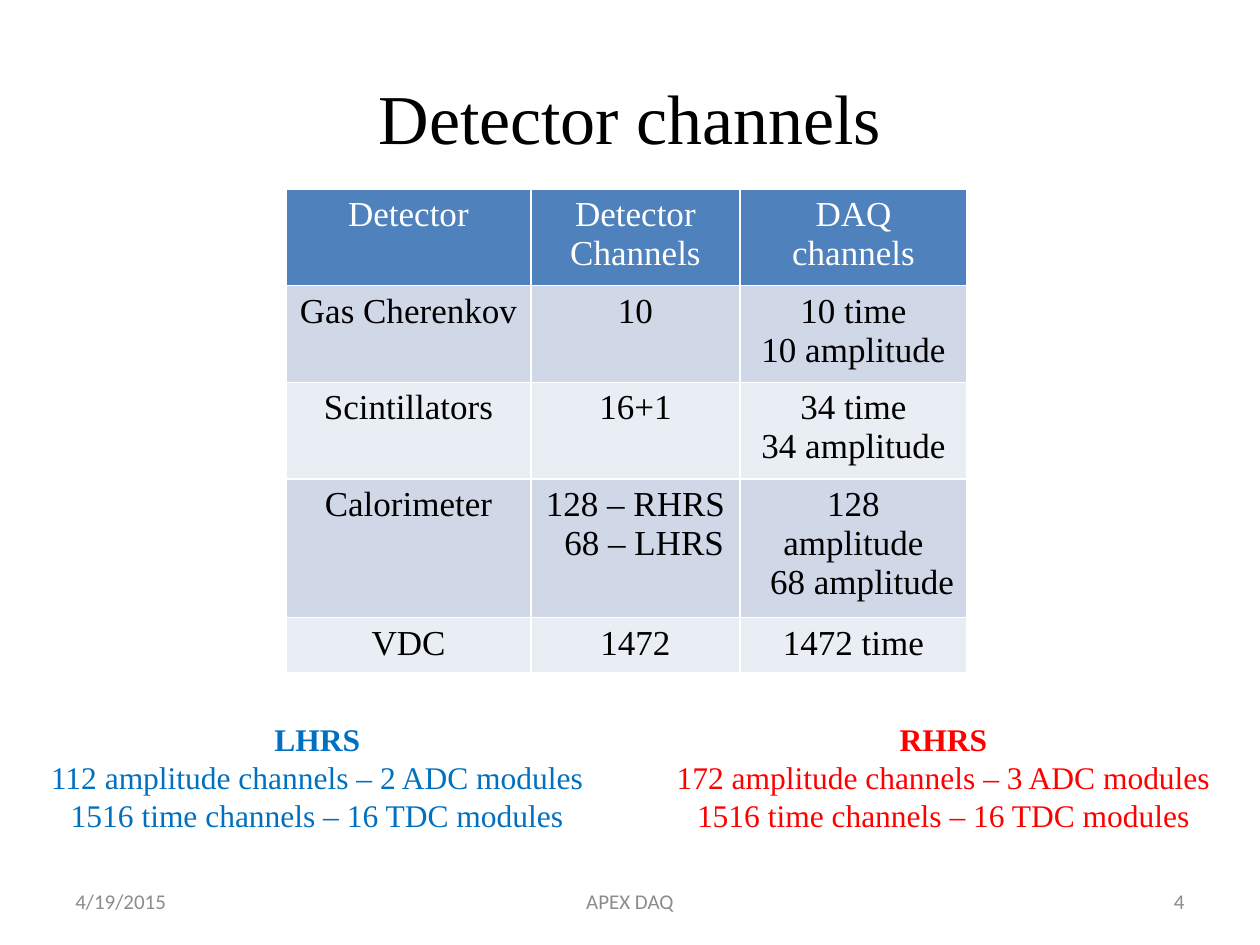
from pptx import Presentation
from pptx.dml.color import RGBColor
from pptx.enum.text import MSO_ANCHOR, PP_ALIGN
from pptx.util import Cm, Pt

LEFT, CENTER, RIGHT = PP_ALIGN.LEFT, PP_ALIGN.CENTER, PP_ALIGN.RIGHT
TOP, MIDDLE = MSO_ANCHOR.TOP, MSO_ANCHOR.MIDDLE
SERIF, SANS = "Times New Roman", "Calibri"
COLORS = {
    "black": "000000", "white": "FFFFFF", "gray": "8C8C8C",
    "blue": "0070C0", "red": "FF0000",
    "header": "4F81BD", "odd": "D0D8E8", "even": "E9EDF4",
}

TITLE = "Detector channels"
ROWS = [
    [["Detector"], ["Detector Channels"], ["DAQ channels"]],
    [["Gas Cherenkov"], ["10"], ["10 time", "10 amplitude"]],
    [["Scintillators"], ["16+1"], ["34 time", "34 amplitude"]],
    [["Calorimeter"], ["128 – RHRS", "68 – LHRS"], ["128 amplitude", "68 amplitude"]],
    [["VDC"], ["1472"], ["1472 time"]],
]
COLUMN_WIDTHS = [4.93, 4.22, 4.57]
ROW_HEIGHTS = [1.82] * 4 + [1.03]
INDENTED = ("68 – LHRS", "68 amplitude")
SUMMARIES = [
    (13.33, 11.38, "red", False,
     ["RHRS", "172 amplitude channels – 3 ADC modules", "1516 time channels – 16 TDC modules"]),
    (0.68, 11.43, "blue", True,
     ["LHRS", "112 amplitude channels – 2 ADC modules", "1516 time channels – 16 TDC modules"]),
]
FOOTERS = [
    (1.27, 5.93, LEFT, "4/19/2015"),
    (8.68, 8.04, CENTER, "APEX DAQ"),
    (18.2, 5.93, RIGHT, "4"),
]


def write_lines(frame, lines, size, color, font=SERIF, align=CENTER, bold_first=False):
    for index, line in enumerate(lines):
        paragraph = frame.paragraphs[0] if index == 0 else frame.add_paragraph()
        paragraph.alignment = align
        if line in INDENTED:
            paragraph._p.get_or_add_pPr().set("marL", str(Cm(0.35)))
        run = paragraph.add_run()
        run.text = line
        run.font.name = font
        run.font.size = Pt(size)
        run.font.bold = bold_first and index == 0
        run.font.color.rgb = RGBColor.from_string(COLORS[color])


def add_text(slide, left, top, width, height, anchor=TOP, wrap=True):
    frame = slide.shapes.add_textbox(Cm(left), Cm(top), Cm(width), Cm(height)).text_frame
    frame.word_wrap = wrap
    frame.vertical_anchor = anchor
    return frame


def add_channel_table(slide):
    table = slide.shapes.add_table(
        len(ROWS), len(COLUMN_WIDTHS), Cm(5.77), Cm(3.81),
        Cm(sum(COLUMN_WIDTHS)), Cm(sum(ROW_HEIGHTS))).table
    for column, width in zip(table.columns, COLUMN_WIDTHS):
        column.width = Cm(width)
    for index, (row, height, texts) in enumerate(zip(table.rows, ROW_HEIGHTS, ROWS)):
        row.height = Cm(height)
        fill = "header" if index == 0 else ("even", "odd")[index % 2]
        for cell, lines in zip(row.cells, texts):
            cell.fill.solid()
            cell.fill.fore_color.rgb = RGBColor.from_string(COLORS[fill])
            write_lines(cell.text_frame, lines, 20, "white" if index == 0 else "black")


def main():
    presentation = Presentation()
    presentation.slide_width, presentation.slide_height = Cm(25.4), Cm(19.05)
    slide = presentation.slides.add_slide(presentation.slide_layouts[5])

    title = slide.shapes.title
    title.left, title.top, title.width, title.height = Cm(1.27), Cm(0.76), Cm(22.86), Cm(3.18)
    title.text_frame.vertical_anchor = MIDDLE
    write_lines(title.text_frame, [TITLE], 40, "black")

    for left, width, align, text in FOOTERS:
        frame = add_text(slide, left, 17.65, width, 1.02, MIDDLE)
        write_lines(frame, [text], 12, "gray", SANS, align)

    add_channel_table(slide)

    for left, width, color, wrap, lines in SUMMARIES:
        frame = add_text(slide, left, 14.4, width, 2.57, wrap=wrap)
        write_lines(frame, lines, 18, color, bold_first=True)

    presentation.save("out.pptx")


if __name__ == "__main__":
    main()
